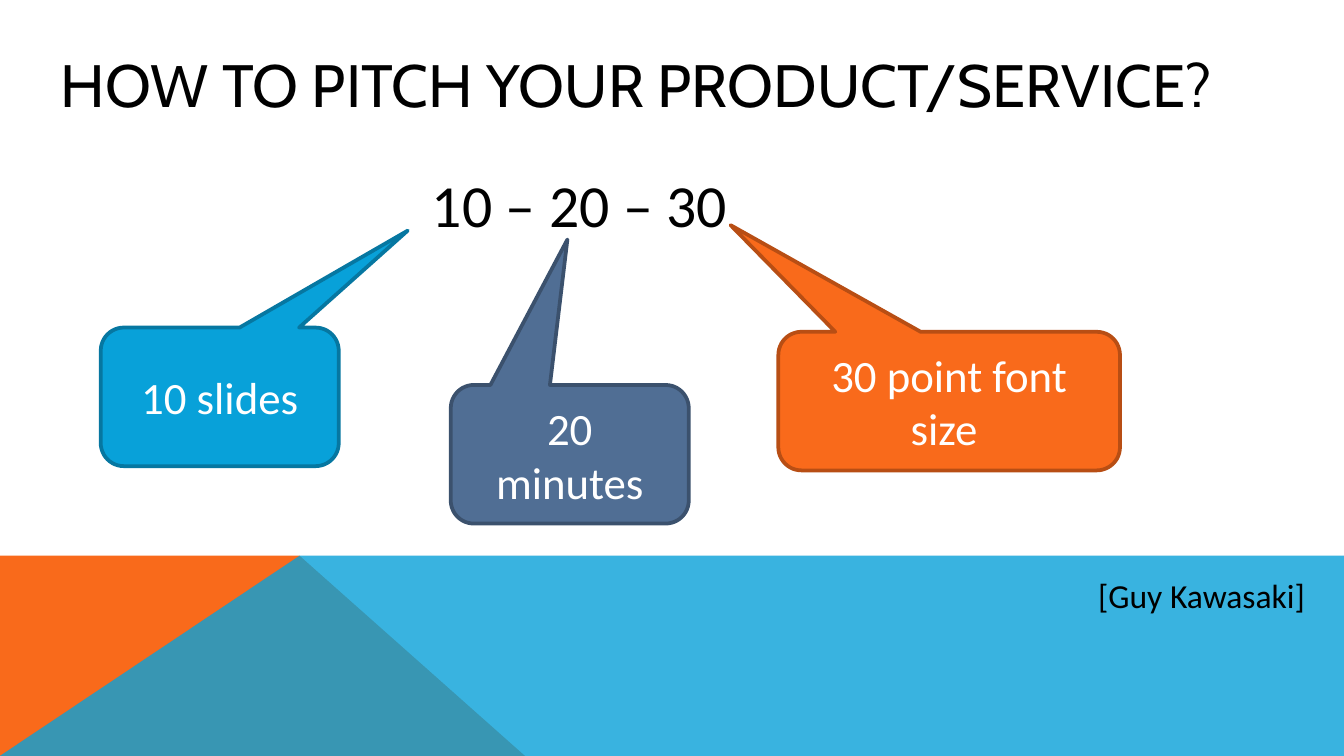
from lxml import etree
from pptx import Presentation
from pptx.dml.color import RGBColor as RGB
from pptx.enum.shapes import MSO_SHAPE as Kind
from pptx.enum.text import MSO_ANCHOR as Anchor, PP_ALIGN as Align
from pptx.oxml.ns import qn
from pptx.util import Pt

PX = 9525  # 96 px to the inch
WIDE, HIGH = 960, 540
BLACK = RGB(0x00, 0x00, 0x00)
WHITE = RGB(0xFF, 0xFF, 0xFF)
BLUE = RGB(0x08, 0xA1, 0xD9)
NAVY = RGB(0x50, 0x6E, 0x94)
ORANGE = RGB(0xF9, 0x6A, 0x1B)
BLUE_EDGE = RGB(0x06, 0x77, 0xA1)
NAVY_EDGE = RGB(0x3B, 0x51, 0x6D)
ORANGE_EDGE = RGB(0xB8, 0x4E, 0x14)

deck = Presentation()
deck.slide_width, deck.slide_height = WIDE * PX, HIGH * PX
slide = deck.slides.add_slide(deck.slide_layouts[6])
shapes = slide.shapes


def write(shape, text, size, font, color):
    frame = shape.text_frame
    frame.word_wrap = True
    para = frame.paragraphs[0]
    para.text = text
    para.font.size = Pt(size)
    para.font.name = font
    para.font.color.rgb = color
    return frame


# Bottom band: orange wedge under a translucent blue sheet
TOP, PEAK = 397, 214
bands = [
    (ORANGE, 100, [(0, HIGH), (0, TOP), (PEAK, TOP), (375, HIGH)]),
    (BLUE, 80, [(0, HIGH), (PEAK, TOP), (WIDE, TOP), (WIDE, HIGH)]),
]
for color, alpha, points in bands:
    pen = shapes.build_freeform(*points[0], scale=PX)
    pen.add_line_segments(points[1:], close=True)
    band = pen.convert_to_shape()
    band.shadow.inherit = False
    band.fill.solid()
    band.fill.fore_color.rgb = color
    band.line.fill.background()
    if alpha < 100:
        tint = band.fill._xPr.find(".//" + qn("a:srgbClr"))
        etree.SubElement(tint, qn("a:alpha")).set("val", str(alpha * 1000))

# Title, rule and credit
texts = [
    ((34, 22, 878, 75), "HOW TO PITCH YOUR PRODUCT/SERVICE?", 32, "Cabin", Anchor.MIDDLE, 0),
    ((299, 115, 257, 71), "10 – 20 – 30", 32, "Calibri", Anchor.TOP, 8),
    ((775, 406, 174, 38), "[Guy Kawasaki]", 18, "Calibri", Anchor.TOP, 0),
]
for place, text, size, font, anchor, gap in texts:
    box = shapes.add_textbox(*(n * PX for n in place))
    frame = write(box, text, size, font, BLACK)
    frame.vertical_anchor = anchor
    frame.paragraphs[0].space_before = Pt(gap)

# Callouts: each tail points at its number
calls = [
    ((72, 234, 170), (0.79, -1.2), "10 slides", BLUE, BLUE_EDGE),
    ((322, 275, 170), (-0.01, -1.55), "20 minutes", NAVY, NAVY_EDGE),
    ((556, 237, 244), (-0.64, -1.27), "30 point font size ", ORANGE, ORANGE_EDGE),
]
for place, tail, text, color, edge in calls:
    call = shapes.add_shape(Kind.ROUNDED_RECTANGULAR_CALLOUT, *(n * PX for n in (*place, 99)))
    call.adjustments[0], call.adjustments[1] = tail
    call.shadow.inherit = False
    call.fill.solid()
    call.fill.fore_color.rgb = color
    call.line.color.rgb = edge
    call.line.width = Pt(2)
    frame = write(call, text, 24, "Calibri", WHITE)
    frame.vertical_anchor = Anchor.MIDDLE
    frame.paragraphs[0].alignment = Align.CENTER

deck.save("out.pptx")
